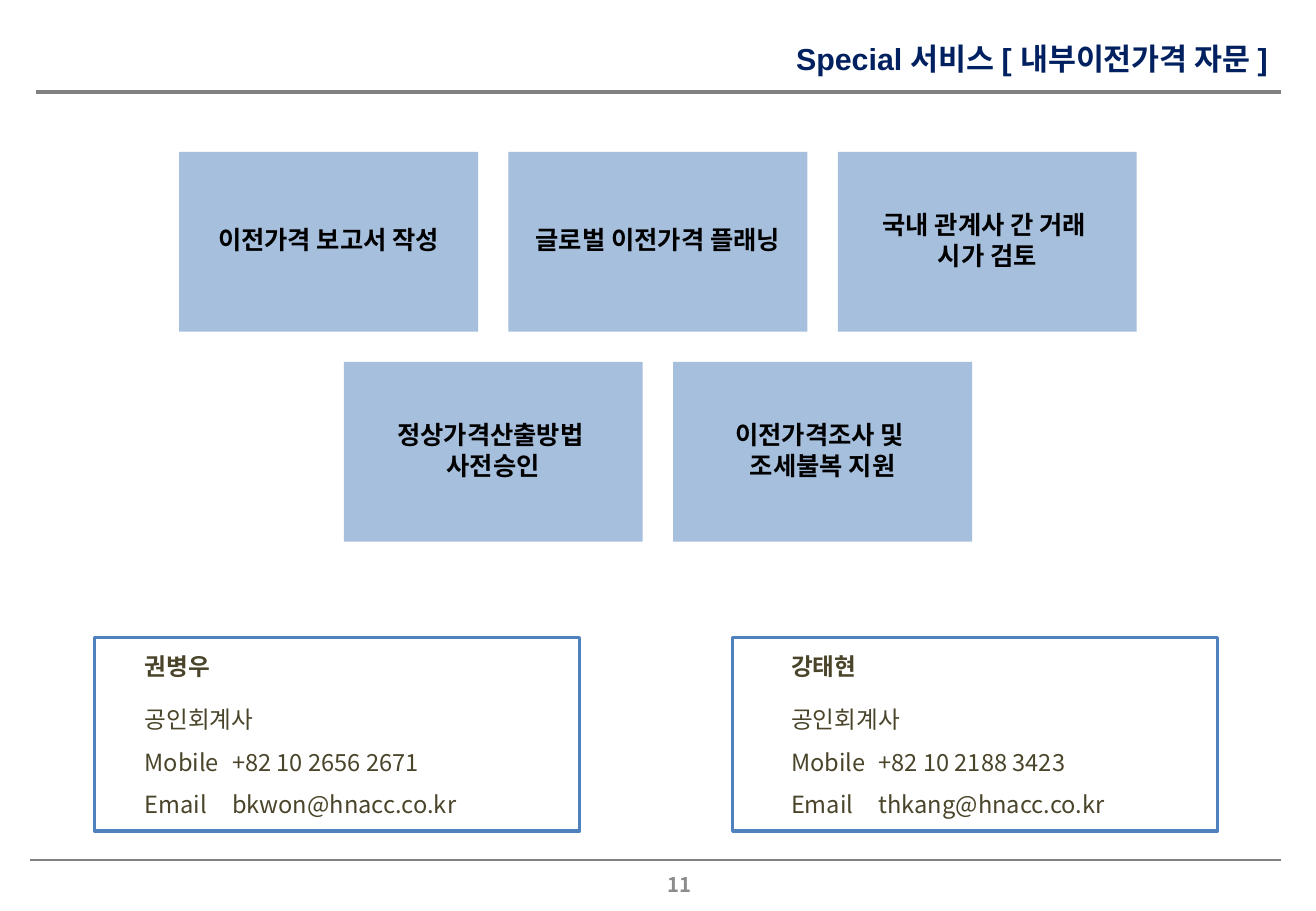
from lxml.etree import SubElement
from pptx import Presentation
from pptx.dml.color import RGBColor
from pptx.enum.shapes import MSO_CONNECTOR as CONN, MSO_SHAPE as SHAPE
from pptx.enum.text import MSO_ANCHOR as ANCHOR, PP_ALIGN as ALIGN
from pptx.oxml.ns import qn
from pptx.util import Inches, Pt

KOREAN = "Noto Sans CJK KR"
BLUE = "4F81BD"
SLIDE_W = 10.83
TILE_W, TILE_H, TILE_GAP, TILE_TOP = 2.46, 1.48, 0.25, 1.25
SERVICES = [
    [["이전가격 보고서 작성"], ["글로벌 이전가격 플래닝"], ["국내 관계사 간 거래 ", "시가 검토"]],
    [["정상가격산출방법 ", "사전승인"], ["이전가격조사 및 ", "조세불복 지원"]],
]
CONTACTS = [
    (0.78, 0.41, "권병우", "+82 10 2656 2671", "bkwon@hnacc.co.kr"),
    (6.03, 0.48, "강태현", "+82 10 2188 3423", "thkang@hnacc.co.kr"),
]


def rgb(color):
    return RGBColor.from_string(color)


def style(p, size, color, bold=True, font=KOREAN):
    for r in p.runs:
        r.font.size = Pt(size)
        r.font.bold = bold
        r.font.name = font
        r.font.color.rgb = rgb(color)
        SubElement(r.font._element, qn("a:ea"), typeface=KOREAN)


def add_rule(s, x, y, right, width):
    line = s.shapes.add_connector(CONN.STRAIGHT, Inches(x), Inches(y), Inches(right), Inches(y))
    line.line.color.rgb = rgb("808080")
    line.line.width = Pt(width)
    SubElement(line._element.spPr, qn("a:effectLst"))


def add_label(s, x, y, w, h, text, align, anchor, size, color, font=KOREAN):
    tf = s.shapes.add_textbox(Inches(x), Inches(y), Inches(w), Inches(h)).text_frame
    tf.word_wrap = True
    tf.vertical_anchor = anchor
    tf.text = text
    p = tf.paragraphs[0]
    p.alignment = align
    style(p, size, color, font=font)


def add_box(s, x, y, w, h, fill, lines):
    sp = s.shapes.add_shape(SHAPE.RECTANGLE, Inches(x), Inches(y), Inches(w), Inches(h))
    sp.shadow.inherit = False
    sp.fill.solid()
    sp.fill.fore_color.rgb = rgb(fill)
    sp.text_frame.word_wrap = True
    sp.text_frame.text = "\n".join(lines)
    return sp


def add_tile(s, x, y, lines):
    sp = add_box(s, x, y, TILE_W, TILE_H, BLUE, lines)
    color = sp._element.spPr.find(qn("a:solidFill"))[0]
    SubElement(color, qn("a:alpha"), val="50000")
    sp.line.fill.background()
    tf = sp.text_frame
    tf.vertical_anchor = ANCHOR.MIDDLE
    tf.margin_left = tf.margin_right = tf.margin_top = tf.margin_bottom = Inches(0.06)
    for p in tf.paragraphs:
        p.alignment = ALIGN.CENTER
        p.line_spacing = 0.9
        p.space_after = Pt(2)
        style(p, 15, "000000")


def add_contact(s, x, inset, name, mobile, email):
    lines = [name, "공인회계사", f"Mobile\t{mobile}", f"Email\t{email}"]
    sp = add_box(s, x, 5.25, 3.99, 1.59, "FFFFFF", lines)
    sp.line.color.rgb = rgb(BLUE)
    sp.line.width = Pt(2)
    tf = sp.text_frame
    tf.vertical_anchor = ANCHOR.TOP
    tf.margin_left = Inches(inset)
    tf.margin_top = Inches(0.12)
    for i, p in enumerate(tf.paragraphs):
        p.alignment = ALIGN.LEFT
        if i == 0:
            p.space_after = Pt(6)
        else:
            p.line_spacing = 1.5
            tabs = SubElement(p._p.get_or_add_pPr(), qn("a:tabLst"))
            SubElement(tabs, qn("a:tab"), pos=str(Inches(0.72)), algn="l")
        style(p, 14, "4A452A", bold=i == 0)


def main():
    prs = Presentation()
    prs.slide_width, prs.slide_height = Inches(SLIDE_W), Inches(7.5)
    s = prs.slides.add_slide(prs.slide_layouts[6])
    add_rule(s, 0.3, 0.76, 10.54, 2.25)
    add_rule(s, 0.25, 7.08, 10.54, 1.5)
    add_label(s, 1.32, 0.28, 9.21, 0.71, "Special 서비스 [ 내부이전가격 자문 ]",
              ALIGN.RIGHT, ANCHOR.TOP, 18, "002060", "Arial")
    for row, tiles in enumerate(SERVICES):
        row_w = len(tiles) * (TILE_W + TILE_GAP) - TILE_GAP
        for col, lines in enumerate(tiles):
            x = (SLIDE_W - row_w) / 2 + col * (TILE_W + TILE_GAP)
            add_tile(s, x, TILE_TOP + row * (TILE_H + TILE_GAP), lines)
    for contact in CONTACTS:
        add_contact(s, *contact)
    add_label(s, 3.88, 7.08, 3.43, 0.4, "11", ALIGN.CENTER, ANCHOR.MIDDLE, 12, "8C8C8C")
    prs.save("out.pptx")


if __name__ == "__main__":
    main()
